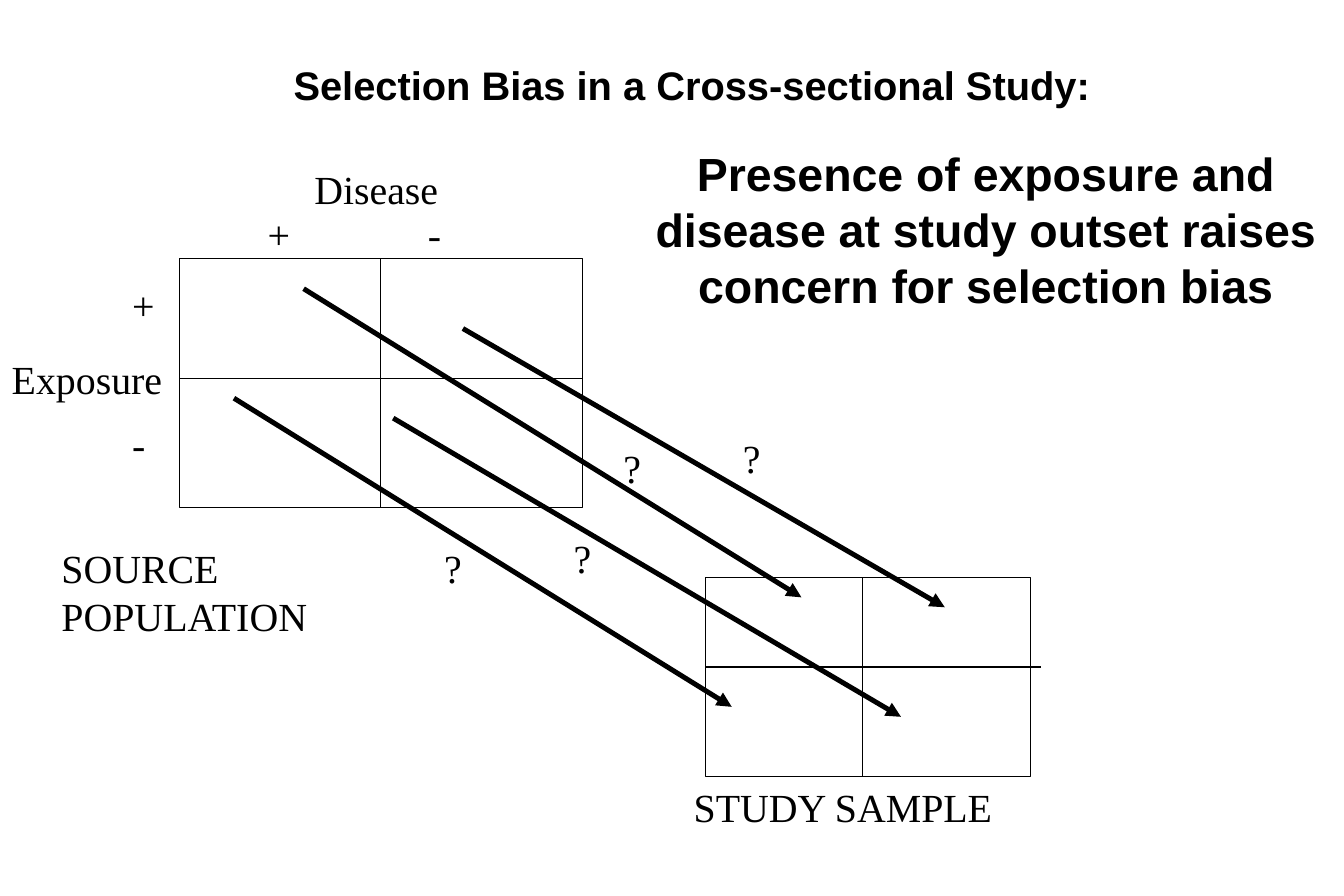
from dataclasses import dataclass
from typing import Any

from lxml.etree import SubElement
from pptx import Presentation
from pptx.dml.color import RGBColor
from pptx.enum.shapes import MSO_CONNECTOR, MSO_SHAPE
from pptx.enum.text import MSO_ANCHOR, MSO_AUTO_SIZE, PP_ALIGN
from pptx.oxml.ns import qn
from pptx.slide import Slide
from pptx.text.text import TextFrame
from pptx.util import Inches, Length, Pt

COLUMNS_PER_INCH = 12


@dataclass(frozen=True)
class Theme:
    ink: RGBColor = RGBColor(0, 0, 0)
    heading_font: str = "Arial"
    label_font: str = "Times New Roman"
    label_size: Length = Pt(24)
    headline_size: Length = Pt(28)
    grid_width: Length = Pt(0.75)
    arrow_width: Length = Pt(3)


@dataclass(frozen=True)
class Box:
    column: float
    row: float
    columns: float
    rows: float

    def lengths(self) -> tuple[Length, ...]:
        return tuple(map(cells, (self.column, self.row, self.columns, self.rows)))


@dataclass(frozen=True)
class Segment:
    start: tuple[float, float]
    end: tuple[float, float]


@dataclass(frozen=True)
class Population:
    box: Box
    split_column: float
    split_row: float
    overhang: float = 0


@dataclass(frozen=True)
class Label:
    text: str
    box: Box
    alignment: PP_ALIGN = PP_ALIGN.LEFT
    wrap: bool = False
    paragraph_gap: Length = Pt(0)


THEME = Theme()
LABEL_FORMAT = {"name": THEME.label_font, "size": THEME.label_size, "bold": False}
TITLE_FORMAT = {"name": THEME.heading_font, "size": THEME.label_size, "bold": True}
HEADLINE_FORMAT = TITLE_FORMAT | {"size": THEME.headline_size}

POPULATIONS = (
    Population(Box(18, 26, 40.5, 25), 38.25, 38),
    Population(Box(70.9, 58, 32.6, 20), 86.6, 67, overhang=1.1),
)
SELECTION_ARROWS = (
    Segment((46.5, 33), (94.9, 61)),
    Segment((30.5, 29), (80.5, 60)),
    Segment((39.5, 42), (90.5, 72)),
    Segment((23.5, 40), (73.5, 71)),
)
QUESTION_POSITIONS = ((55.5, 53), (60.5, 44), (72.5, 43), (42.5, 54))
LABELS = (
    Label("Disease", Box(30.4, 16, 14.9, 6)),
    Label("Exposure", Box(0, 35, 17.5, 6)),
    Label("+", Box(25.7, 20.5, 5, 6)),
    Label("-", Box(41.8, 20.5, 4, 6)),
    Label("+\n-", Box(12.1, 27.6, 5.3, 20.4), paragraph_gap=Pt(55)),
    Label("SOURCE POPULATION", Box(5, 54, 30, 11), wrap=True),
    Label("STUDY SAMPLE", Box(68.5, 78, 32.5, 6)),
    *(Label("?", Box(column, row, 6, 6), PP_ALIGN.CENTER, True)
      for column, row in QUESTION_POSITIONS),
)
TITLE = Label("Selection Bias in a Cross-sectional Study:",
              Box(2, 5, 135, 7), PP_ALIGN.CENTER, True)
HEADLINE = Label("Presence of exposure and disease at study outset raises "
                 "concern for selection bias",
                 Box(64.5, 14, 69, 18), PP_ALIGN.CENTER, True)


def cells(count: float) -> Length:
    return Inches(count / COLUMNS_PER_INCH)


def apply_format(target: Any, values: dict[str, Any]) -> None:
    for name, value in values.items():
        setattr(target, name, value)


def write_text(frame: TextFrame, label: Label, font_format: dict[str, Any]) -> None:
    frame.text = label.text
    apply_format(frame, {"word_wrap": label.wrap, "auto_size": MSO_AUTO_SIZE.NONE})
    for index, paragraph in enumerate(frame.paragraphs):
        apply_format(paragraph, {
            "alignment": label.alignment,
            "space_before": label.paragraph_gap if index else Pt(0),
        })
        for run in paragraph.runs:
            apply_format(run.font, font_format)
            run.font.color.rgb = THEME.ink


def draw_label(slide: Slide, label: Label, font_format: dict[str, Any]) -> None:
    text_box = slide.shapes.add_textbox(*label.box.lengths())
    write_text(text_box.text_frame, label, font_format)


def draw_title(slide: Slide, label: Label) -> None:
    title = slide.shapes.title
    positions = zip(("left", "top", "width", "height"), label.box.lengths())
    apply_format(title, dict(positions))
    title.text_frame.vertical_anchor = MSO_ANCHOR.MIDDLE
    write_text(title.text_frame, label, TITLE_FORMAT)


def draw_line(slide: Slide, segment: Segment, width: Length, arrow: bool = False) -> None:
    connector = slide.shapes.add_connector(
        MSO_CONNECTOR.STRAIGHT, *map(cells, (*segment.start, *segment.end)))
    connector.line.color.rgb = THEME.ink
    connector.line.width = width
    properties = connector._element.spPr
    if arrow:
        SubElement(properties.find(qn("a:ln")), qn("a:tailEnd"), type="triangle")
    SubElement(properties, qn("a:effectLst"))


def draw_population(slide: Slide, population: Population) -> None:
    box = population.box
    outline = slide.shapes.add_shape(MSO_SHAPE.RECTANGLE, *box.lengths())
    outline.shadow.inherit = False
    outline.fill.background()
    outline.line.color.rgb = THEME.ink
    outline.line.width = THEME.grid_width
    right = box.column + box.columns + population.overhang
    dividers = (
        Segment((population.split_column, box.row),
                (population.split_column, box.row + box.rows)),
        Segment((box.column, population.split_row), (right, population.split_row)),
    )
    for divider in dividers:
        draw_line(slide, divider, THEME.grid_width)


def main() -> None:
    presentation = Presentation()
    apply_format(presentation, {"slide_width": cells(135), "slide_height": cells(90)})
    layout = presentation.slide_layouts.get_by_name("Title Only")
    slide = presentation.slides.add_slide(layout)
    draw_title(slide, TITLE)
    for population in POPULATIONS:
        draw_population(slide, population)
    for arrow in SELECTION_ARROWS:
        draw_line(slide, arrow, THEME.arrow_width, arrow=True)
    for label in LABELS:
        draw_label(slide, label, LABEL_FORMAT)
    draw_label(slide, HEADLINE, HEADLINE_FORMAT)
    presentation.save("out.pptx")


if __name__ == "__main__":
    main()
